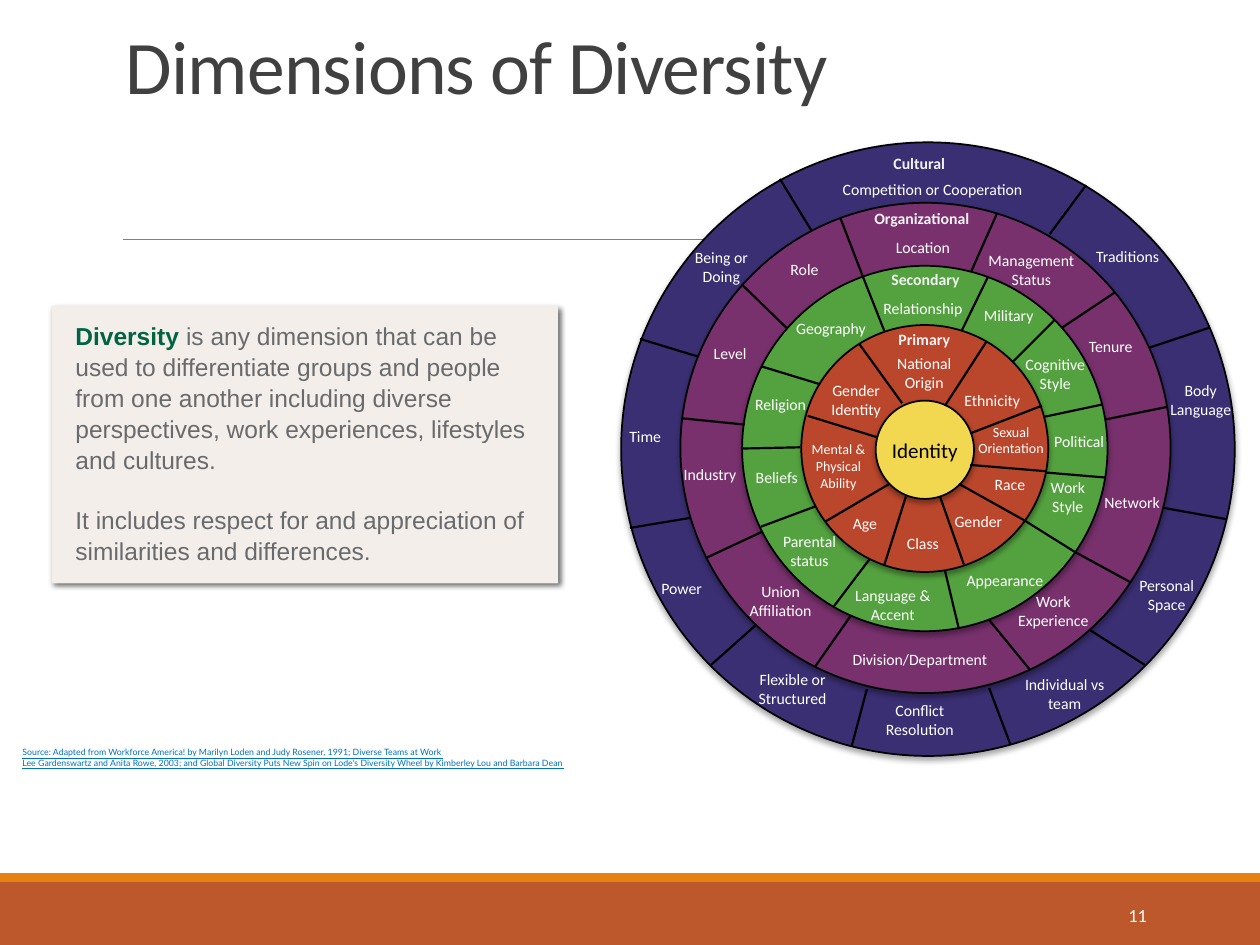
from lxml import etree
from pptx import Presentation
from pptx.dml.color import RGBColor
from pptx.enum.shapes import MSO_CONNECTOR, MSO_SHAPE
from pptx.enum.text import MSO_ANCHOR, MSO_AUTO_SIZE, PP_ALIGN
from pptx.oxml.ns import qn
from pptx.util import Inches, Pt

RECT, OVAL = MSO_SHAPE.RECTANGLE, MSO_SHAPE.OVAL
STRAIGHT = MSO_CONNECTOR.STRAIGHT
LEFT, CENTER, RIGHT = PP_ALIGN.LEFT, PP_ALIGN.CENTER, PP_ALIGN.RIGHT
TOP, MIDDLE, BOTTOM = MSO_ANCHOR.TOP, MSO_ANCHOR.MIDDLE, MSO_ANCHOR.BOTTOM
FIT = MSO_AUTO_SIZE.SHAPE_TO_FIT_TEXT

COLORS = {
    "rust": "BD582C", "orange": "E48312", "rule": "808080", "panel": "F3EEEA",
    "title": "404040", "white": "FFFFFF", "heading": "F2F2F2", "black": "000000",
    "cultural": "3A2F73", "organizational": "78316D", "secondary": "54A23F",
    "primary": "BA462C", "identity": "F2D751",
    "source": "0070C0", "term": "006341", "body": "696A6C",
}

# All wheel positions are inches from the top left of the wheel area.
# Ring: colour, left, top, diameter
RINGS = [
    ("cultural", 0.93, 0.13, 4.87), ("organizational", 1.4, 0.61, 3.89),
    ("secondary", 1.89, 1.11, 2.9), ("primary", 2.36, 1.58, 1.96),
    ("identity", 2.95, 2.18, 0.78),
]
# Heading or label: text, left, top, width, height
RING_HEADINGS = [
    ("Primary", 2.97, 1.57, 0.73, 0.25), ("Secondary", 2.96, 1.09, 0.77, 0.4),
    ("Organizational", 2.77, 0.61, 1.09, 0.25), ("Cultural", 2.75, 0.17, 1.09, 0.25),
]
SMALL_LABELS = [
    ("Mental & Physical Ability", 2.29, 2.45, 0.73, 0.5),
    ("Sexual Orientation", 3.66, 2.31, 0.73, 0.5),
]
PRIMARY_LABELS = [
    ("National Origin", 2.97, 1.76, 0.73, 0.4), ("Class", 2.96, 3.19, 0.73, 0.25),
    ("Age", 2.5, 3.03, 0.73, 0.25), ("Gender", 3.4, 3.01, 0.73, 0.25),
    ("Race", 3.65, 2.72, 0.73, 0.25), ("Gender Identity", 2.43, 1.97, 0.73, 0.4),
    ("Ethnicity", 3.51, 2.05, 0.73, 0.25),
]
SECONDARY_LABELS = [
    ("Military", 3.64, 1.38, 0.73, 0.25), ("Political", 4.2, 2.38, 0.73, 0.25),
    ("Relationship", 2.86, 1.32, 0.93, 0.25), ("Geography", 2.13, 1.48, 0.93, 0.25),
    ("Cognitive Style", 4.01, 1.77, 0.73, 0.4), ("Appearance", 3.52, 3.48, 0.91, 0.25),
    ("Work Style", 4.11, 2.74, 0.73, 0.4), ("Religion", 1.73, 2.08, 0.93, 0.25),
    ("Beliefs", 1.7, 2.66, 0.93, 0.25), ("Parental status", 1.96, 3.17, 0.93, 0.4),
    ("Language & Accent", 2.63, 3.6, 0.91, 0.4),
]
ORGANIZATIONAL_LABELS = [
    ("Location", 2.96, 0.84, 0.73, 0.25), ("Division/Department", 2.65, 4.11, 1.3, 0.4),
    ("Management Status", 3.73, 0.94, 0.91, 0.4), ("Role", 2.02, 1.01, 0.73, 0.25),
    ("Level", 1.43, 1.68, 0.73, 0.25), ("Union Affiliation", 1.83, 3.57, 0.73, 0.4),
    ("Industry", 1.27, 2.64, 0.73, 0.25), ("Tenure", 4.45, 1.62, 0.73, 0.25),
    ("Work Experience", 3.96, 3.65, 0.8, 0.56), ("Network", 4.62, 2.86, 0.73, 0.25),
]
CULTURAL_LABELS = [
    ("Being or Doing", 1.36, 0.92, 0.73, 0.4),
    ("Competition or Cooperation", 2.56, 0.38, 1.68, 0.4),
    ("Conflict Resolution", 2.85, 4.51, 0.9, 0.4),
    ("Flexible or Structured", 1.84, 4.27, 0.9, 0.4),
    ("Individual vs team", 4, 4.31, 0.9, 0.4), ("Personal Space", 4.81, 3.52, 0.9, 0.4),
    ("Traditions", 4.5, 0.91, 0.9, 0.25), ("Time", 0.67, 2.34, 0.9, 0.25),
    ("Body Language", 5.08, 1.97, 0.9, 0.4), ("Power", 0.96, 3.54, 0.9, 0.25),
]
# Spoke: start x, start y, end x, end y
CULTURAL_SPOKES = [
    (2.19, 0.42, 2.44, 0.83), (4.62, 0.47, 4.33, 0.86), (5.12, 1.76, 5.6, 1.6),
    (1.08, 1.69, 1.54, 1.83), (1, 3.19, 1.48, 3.11), (1.64, 4.28, 2, 3.96),
    (5.73, 3.12, 5.23, 3.03), (5.09, 4.28, 4.65, 4), (2.76, 4.92, 2.88, 4.47),
    (4.02, 4.91, 3.85, 4.46),
]
ORGANIZATIONAL_SPOKES = [
    (1.89, 1.26, 2.25, 1.61), (2.67, 0.73, 2.85, 1.2), (3.91, 0.7, 3.71, 1.15),
    (1.41, 2.32, 1.91, 2.37), (1.6, 3.43, 2.05, 3.22), (2.47, 4.29, 2.75, 3.89),
    (4.17, 4.31, 3.85, 3.92), (4.97, 3.62, 4.53, 3.38), (4.77, 2.33, 5.26, 2.23),
    (4.43, 1.6, 4.85, 1.32),
]
SECONDARY_SPOKES = [
    (2.9, 3.44, 2.62, 3.81), (3.5, 3.53, 3.61, 3.99), (4.13, 3.13, 4.53, 3.38),
    (2.05, 1.91, 2.51, 2.05), (1.89, 2.56, 2.35, 2.55), (2.04, 3.18, 2.47, 3.02),
    (4.3, 2.75, 4.77, 2.79), (4.28, 2.31, 4.75, 2.21), (2.85, 1.2, 3.02, 1.63),
    (3.63, 1.63, 3.84, 1.2), (4.04, 1.87, 4.37, 1.54),
]
PRIMARY_SPOKES = [
    (2.82, 1.73, 3.16, 2.2), (3.83, 1.71, 3.5, 2.22), (2.41, 2.3, 2.96, 2.47),
    (3.7, 2.69, 4.3, 2.74), (3.7, 2.44, 4.27, 2.22), (3.61, 2.84, 4.13, 3.13),
    (3.46, 2.94, 3.65, 3.48), (3.19, 2.94, 3.02, 3.48), (2.55, 3.14, 3.06, 2.84),
]


def rgb(name):
    return RGBColor.from_string(COLORS[name])


def add_shadow(shape, opacity, blur, distance, angle):
    """Outer black shadow; blur and distance in points, angle in degrees."""
    shape.shadow.inherit = False
    effects = shape._element.spPr.find(qn("a:effectLst"))
    outer = etree.SubElement(effects, qn("a:outerShdw"), blurRad=str(Pt(blur)),
                             dist=str(Pt(distance)), dir=str(angle * 60000),
                             algn="ctr", rotWithShape="0")
    color = etree.SubElement(outer, qn("a:srgbClr"), val=COLORS["black"])
    etree.SubElement(color, qn("a:alpha"), val=str(opacity * 1000))


def add_solid(slide, kind, x, y, w, h, fill, outline=None):
    shape = slide.shapes.add_shape(kind, Inches(x), Inches(y), Inches(w), Inches(h))
    shape.shadow.inherit = False
    shape.fill.solid()
    shape.fill.fore_color.rgb = rgb(fill)
    if outline:
        shape.line.color.rgb = rgb(outline)
        shape.line.width = Pt(1)
    else:
        shape.line.fill.background()
    return shape


def add_line(slide, x1, y1, x2, y2, color, width):
    line = slide.shapes.add_connector(STRAIGHT, Inches(x1), Inches(y1), Inches(x2), Inches(y2))
    line.line.color.rgb = rgb(color)
    line.line.width = Pt(width)
    etree.SubElement(line._element.spPr, qn("a:effectLst"))


def style(run, size, color, font="Calibri", bold=False):
    run.font.size = Pt(size)
    run.font.name = font
    run.font.bold = bold
    run.font.color.rgb = rgb(color)


def add_text(slide, text, x, y, w, h, size, color, font="Calibri", bold=False,
             align=LEFT, anchor=TOP, fit=False):
    box = slide.shapes.add_textbox(Inches(x), Inches(y), Inches(w), Inches(h))
    frame = box.text_frame
    frame.word_wrap = True
    frame.vertical_anchor = anchor
    if fit:
        frame.auto_size = FIT
    paragraph = frame.paragraphs[0]
    paragraph.text = text
    paragraph.alignment = align
    for run in paragraph.runs:
        style(run, size, color, font, bold)
    return frame


def add_footer(slide, x, y, w, h):
    stripe = 0.07
    add_solid(slide, RECT, x, y + stripe, w, h - stripe, "rust")
    add_solid(slide, RECT, x, y, w, stripe, "orange")
    add_text(slide, "11", x + 8.12, y + 0.13, 1.08, 0.4, 10.5, "white",
             align=RIGHT, anchor=MIDDLE)


def add_heading(slide, x, y, w, h):
    add_line(slide, x + 0.08, y + 1.59, x + w, y + 1.59, "rule", 0.5)
    title = add_text(slide, "Dimensions of Diversity", x, y, w, h, 43.2, "title",
                     anchor=BOTTOM).paragraphs[0]
    title.line_spacing = 0.85
    title.runs[0].font._element.set("spc", "-50")


def add_definition(slide, x, y, w, h):
    panel = add_solid(slide, RECT, x, y, w, h, "panel")
    add_shadow(panel, 60, 3, 2, 45)
    frame = add_text(slide, "Diversity ", x + 0.09, y + 0.06, w - 0.07, h + 0.17, 14,
                     "term", "Arial", True)
    meaning = frame.paragraphs[0].add_run()
    meaning.text = ("is any dimension that can be used to differentiate groups and people from "
                    "one another including diverse perspectives, work experiences, lifestyles "
                    "and cultures.")
    respect = frame.add_paragraph()
    respect.text = "It includes respect for and appreciation of similarities and differences."
    respect.space_before = Pt(17)
    for run in (meaning, respect.runs[0]):
        style(run, 14, "body", "Arial")
    for paragraph in frame.paragraphs:
        paragraph.line_spacing = 1.05


def add_source(slide, x, y, w, h):
    credit = ("Source: Adapted from Workforce America! by Marilyn Loden and Judy Rosener, 1991; "
              "Diverse Teams at Work\nLee Gardenswartz and Anita Rowe, 2003; and Global Diversity "
              "Puts New Spin on Lode's Diversity Wheel by Kimberley Lou and Barbara Dean")
    frame = add_text(slide, credit, x, y, w, h, 5, "source", "Lato", fit=True)
    for run in frame.paragraphs[0].runs:
        run.font.underline = True


def add_wheel(slide, x, y):
    for color, dx, dy, diameter in RINGS:
        ring = add_solid(slide, OVAL, x + dx, y + dy, diameter, diameter, color, "black")
        add_shadow(ring, 35, 3.1, 1.8, 90)
    add_text(slide, "Identity", x + 2.98, y + 2.42, 0.73, 0.5, 12, "black", fit=True)
    labels = PRIMARY_LABELS + SECONDARY_LABELS + ORGANIZATIONAL_LABELS + CULTURAL_LABELS
    for group, size, color, bold in ((labels, 9, "white", False),
                                     (SMALL_LABELS, 8, "white", False),
                                     (RING_HEADINGS, 9, "heading", True)):
        for text, dx, dy, w, h in group:
            add_text(slide, text, x + dx, y + dy, w, h, size, color, bold=bold,
                     align=CENTER, fit=True)
    for x1, y1, x2, y2 in (CULTURAL_SPOKES + ORGANIZATIONAL_SPOKES
                           + SECONDARY_SPOKES + PRIMARY_SPOKES):
        add_line(slide, x + x1, y + y1, x + x2, y + y2, "black", 1.25)


def main():
    deck = Presentation()
    deck.slide_width, deck.slide_height = Inches(10), Inches(7.5)
    slide = deck.slides.add_slide(deck.slide_layouts[6])
    add_footer(slide, 0, 6.93, 10, 0.57)
    add_heading(slide, 0.9, 0.31, 8.25, 0.61)
    add_definition(slide, 0.41, 2.43, 4.02, 2.2)
    add_wheel(slide, 4, 1)
    add_source(slide, 0.08, 5.88, 5, 0.27)
    deck.save("out.pptx")


if __name__ == "__main__":
    main()
